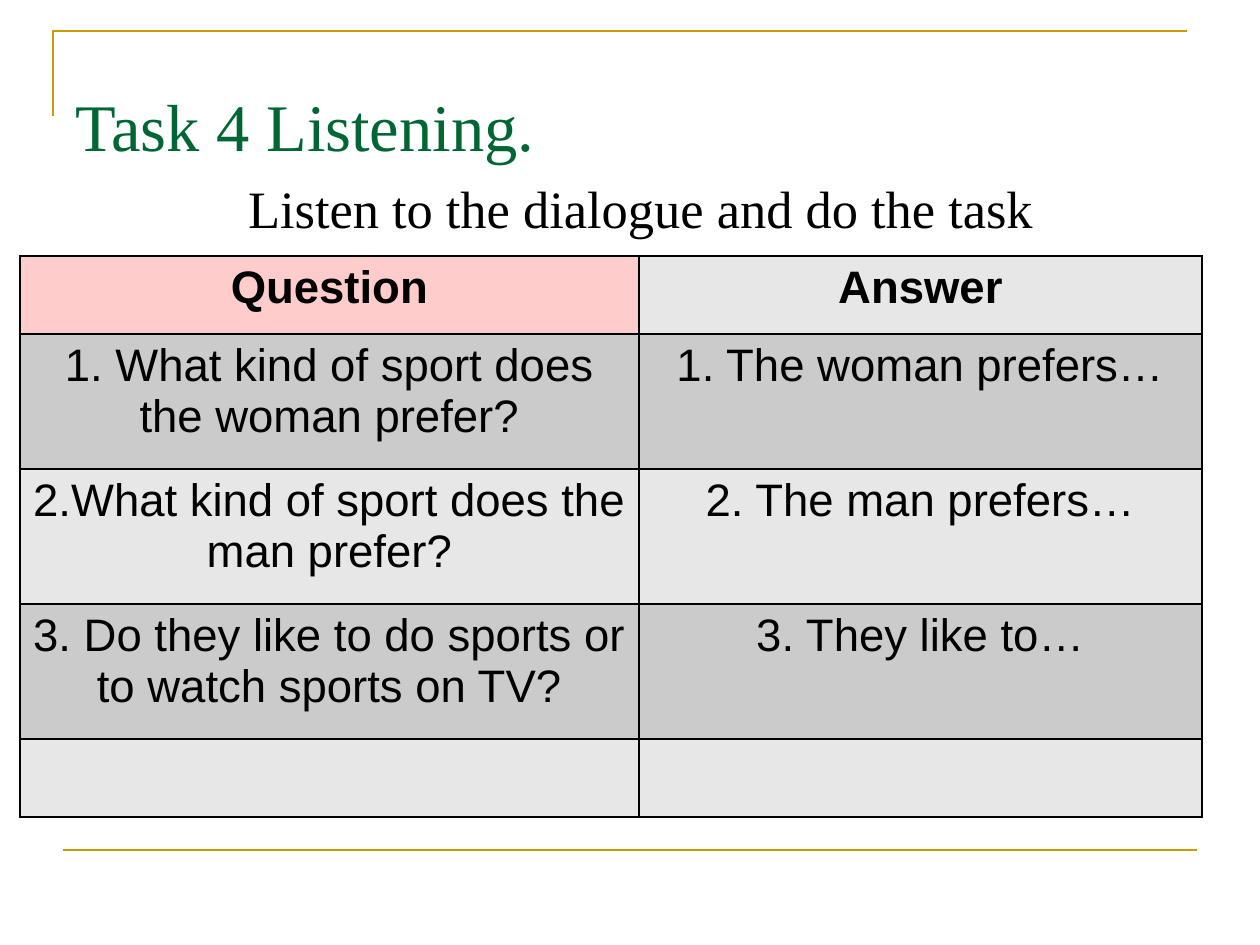
import pptx
import pptx.util
import pptx.dml.color
import pptx.enum.text
import pptx.enum.shapes
import pptx.oxml.ns
import lxml.etree

HEADS = ("Question", "Answer")
ROWS = [
    HEADS,
    ("1. What kind of sport does the woman prefer?", "1. The woman prefers…"),
    ("2.What kind of sport does the man prefer?", "2. The man prefers…"),
    ("3. Do they like to do sports or to watch sports on TV?", "3. They like to…"),
    ("", ""),
]
COLS = (619, 563)
HIGH = (78, 135, 135, 135, 78)
GRID = (20, 256)
CORNER = [(53, 116), (53, 31), (1187, 31)]
RULE = [(63, 850), (1197, 850)]

ALIGN = pptx.enum.text.PP_ALIGN
ANCHOR = pptx.enum.text.MSO_ANCHOR
THEME = {
    "title": {"name": "Times New Roman", "size": 38, "bold": False, "color": "006633"},
    "lead": {"name": "Times New Roman", "size": 30, "bold": False, "color": "000000"},
    "head": {"name": "Arial", "size": 26, "bold": True, "color": "000000"},
    "cell": {"name": "Arial", "size": 26, "bold": False, "color": "000000"},
    "gold": "CC9900",
    "pink": "FFCCCC",
    "bands": ("E7E7E7", "CBCBCB"),
    "edge": "000000",
}
TEXTS = [
    ("Task 4 Listening.", "title", (63, 46, 1134, 157), ALIGN.LEFT, ANCHOR.MIDDLE),
    ("Listen to the dialogue and do the task", "lead", (74, 170, 1134, 76), ALIGN.CENTER, ANCHOR.TOP),
]


def px(n):
    return pptx.util.Emu(round(n * 914400 / 126))


def rgb(code):
    return pptx.dml.color.RGBColor.from_string(code)


def write(frame, text, style, align):
    para = frame.paragraphs[0]
    para.alignment = align
    if not text:
        return
    run = para.add_run()
    run.text = text
    for key, val in THEME[style].items():
        if key == "color":
            run.font.color.rgb = rgb(val)
        else:
            setattr(run.font, key, pptx.util.Pt(val) if key == "size" else val)


def stroke(shape):
    shape.line.color.rgb = rgb(THEME["gold"])
    shape.line.width = pptx.util.Pt(1.5)


def border(cell):
    qn = pptx.oxml.ns.qn
    props = cell._tc.get_or_add_tcPr()
    for i, side in enumerate(("a:lnL", "a:lnR", "a:lnT", "a:lnB")):
        line = lxml.etree.Element(qn(side), w=str(pptx.util.Pt(1)))
        fill = lxml.etree.SubElement(line, qn("a:solidFill"))
        lxml.etree.SubElement(fill, qn("a:srgbClr"), val=THEME["edge"])
        props.insert(i, line)


def frame_lines(slide):
    pts = [(px(x), px(y)) for x, y in CORNER]
    pen = slide.shapes.build_freeform(*pts[0], scale=1.0)
    pen.add_line_segments(pts[1:], close=False)
    angle = pen.convert_to_shape()
    angle.fill.background()
    angle.shadow.inherit = False
    stroke(angle)
    ends = [px(n) for point in RULE for n in point]
    rule = slide.shapes.add_connector(pptx.enum.shapes.MSO_CONNECTOR.STRAIGHT, *ends)
    lxml.etree.SubElement(rule._element.spPr, pptx.oxml.ns.qn("a:effectLst"))
    stroke(rule)


def table(slide):
    box = (*GRID, sum(COLS), sum(HIGH))
    grid = slide.shapes.add_table(len(ROWS), len(COLS), *map(px, box)).table
    for col, wide in zip(grid.columns, COLS):
        col.width = px(wide)
    for r, (words, high) in enumerate(zip(ROWS, HIGH)):
        grid.rows[r].height = px(high)
        for c, text in enumerate(words):
            cell = grid.cell(r, c)
            tint = THEME["pink"] if (r, c) == (0, 0) else THEME["bands"][r % 2]
            cell.fill.solid()
            cell.fill.fore_color.rgb = rgb(tint)
            border(cell)
            write(cell.text_frame, text, "cell" if r else "head", ALIGN.CENTER)


def main():
    deck = pptx.Presentation()
    deck.slide_width, deck.slide_height = px(1260), px(945)
    slide = deck.slides.add_slide(deck.slide_layouts[6])
    frame_lines(slide)
    for text, style, box, align, anchor in TEXTS:
        frame = slide.shapes.add_textbox(*map(px, box)).text_frame
        frame.word_wrap = True
        frame.vertical_anchor = anchor
        write(frame, text, style, align)
    table(slide)
    deck.save("out.pptx")


if __name__ == "__main__":
    main()
